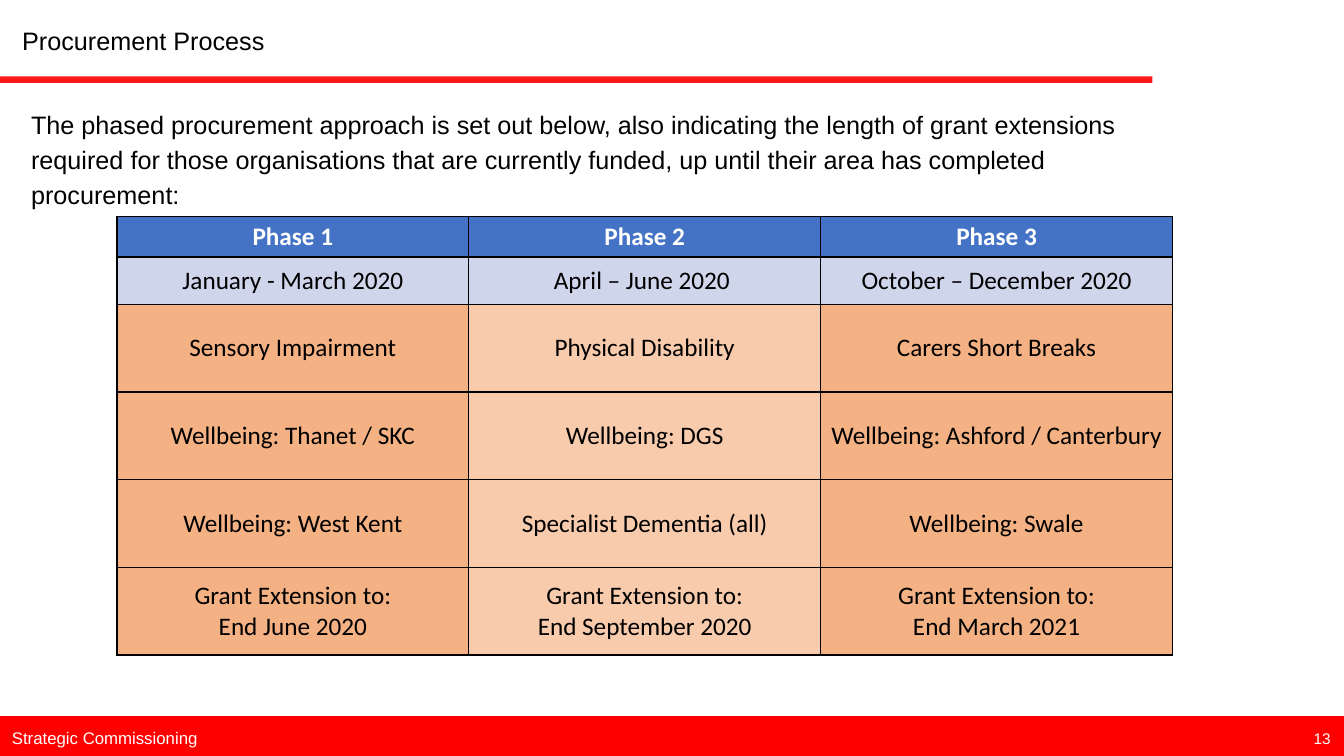
from pptx import Presentation
from pptx import util as u
from pptx.dml.color import RGBColor
from pptx.enum import shapes, text
from pptx.oxml import parse_xml
from pptx.oxml.ns import nsdecls, qn

PX = 9144  # EMU in one px, 100 px to the inch
THEME = {
    "sans": "Arial", "table_font": "Calibri",
    "main": 18, "footer": 12, "number": 11,
    "black": "000000", "white": "FFFFFF", "red": "FF0000",
    "header": "4472C4", "dates": "CFD5EA",
    "columns": ["F4B183", "F8CBAD", "F4B183"],
}
TOP, MIDDLE = text.MSO_ANCHOR.TOP, text.MSO_ANCHOR.MIDDLE


def px(*lengths):
    return [u.Emu(n * PX) for n in lengths]


def style(tf, font, size, color, bold=False, **paragraph_format):
    values = {"name": THEME[font], "size": u.Pt(THEME[size]), "bold": bold}
    for p in tf.paragraphs:
        for name, value in paragraph_format.items():
            setattr(p, name, value)
        for r in p.runs:
            for name, value in values.items():
                setattr(r.font, name, value)
            r.font.color.rgb = RGBColor.from_string(THEME[color])


prs = Presentation()
prs.slide_width, prs.slide_height = px(1333, 750)
s = prs.slides.add_slide(prs.slide_layouts[5])
red = RGBColor.from_string(THEME["red"])

# Red footer band and header rule
band = s.shapes.add_shape(shapes.MSO_SHAPE.RECTANGLE, *px(0, 711, 1333, 40))
band.shadow.inherit = False
band.fill.solid()
band.fill.fore_color.rgb = red
band.line.color.rgb = red
band.line.width = u.Pt(1)

rule = s.shapes.add_connector(shapes.MSO_CONNECTOR.STRAIGHT, *px(0, 79, 1143, 79))
rule.line.color.rgb = red
rule.line.width = u.Pt(4.5)
rule_color = rule.line._ln.find(".//" + qn("a:srgbClr"))
rule_color.append(parse_xml(f'<a:alpha {nsdecls("a")} val="90000"/>'))
rule._element.spPr.append(parse_xml(f'<a:effectLst {nsdecls("a")}/>'))

# Title
title = s.shapes.title
title.left, title.top, title.width, title.height = px(12, 20, 744, 40)
tf = title.text_frame
tf.text = "Procurement Process"
tf.auto_size = text.MSO_AUTO_SIZE.NONE
tf.vertical_anchor = TOP
style(tf, "sans", "main", "black", alignment=text.PP_ALIGN.LEFT)

# Introduction, footer and slide number
INTRO = (
    "The phased procurement approach is set out below, also indicating the length "
    "of grant extensions required for those organisations that are currently funded, "
    "up until their area has completed procurement:"
)
TEXT_BOXES = [
    (INTRO, (21, 99, 1122, 112), TOP, "main", "black",
     {"line_spacing": 1.15, "space_after": u.Pt(10)}),
    ("Strategic Commissioning", (2, 712, 233, 40), MIDDLE, "footer", "white", {}),
    ("13", (1293, 718, 41, 29), TOP, "number", "white", {}),
]
for words, box, anchor, size, color, paragraph_format in TEXT_BOXES:
    tf = s.shapes.add_textbox(*px(*box)).text_frame
    tf.text = words
    tf.word_wrap = True
    tf.vertical_anchor = anchor
    style(tf, "sans", size, color, **paragraph_format)

# Phase table
ROWS = [
    ("Phase 1", "Phase 2", "Phase 3"),
    ("January - March 2020", "April – June 2020 ", "October – December 2020"),
    ("Sensory Impairment", "Physical Disability", "Carers Short Breaks"),
    ("Wellbeing: Thanet / SKC", "Wellbeing: DGS", "Wellbeing: Ashford / Canterbury"),
    ("Wellbeing: West Kent", "Specialist Dementia (all)", "Wellbeing: Swale"),
    tuple(f"Grant Extension to:\nEnd {month}"
          for month in ("June 2020", "September 2020", "March 2021")),
]
HEIGHTS = [40, 47] + [87] * 4
CELL_FORMAT = {
    "vertical_anchor": MIDDLE,
    "margin_left": u.Emu(7 * PX), "margin_right": u.Emu(7 * PX),
    "margin_top": u.Emu(0), "margin_bottom": u.Emu(0),
}
table = s.shapes.add_table(len(ROWS), 3, *px(116, 215, 3 * 349, sum(HEIGHTS))).table
for column in table.columns:
    column.width = u.Emu(349 * PX)
for i, (labels, height) in enumerate(zip(ROWS, HEIGHTS)):
    table.rows[i].height = u.Emu(height * PX)
    for j, label in enumerate(labels):
        cell = table.cell(i, j)
        cell.text = label
        for name, value in CELL_FORMAT.items():
            setattr(cell, name, value)
        style(cell.text_frame, "table_font", "main", "black" if i else "white",
              bold=i == 0, alignment=text.PP_ALIGN.CENTER)
        fill = (THEME["header"], THEME["dates"])[i] if i < 2 else THEME["columns"][j]
        cell.fill.solid()
        cell.fill.fore_color.rgb = RGBColor.from_string(fill)
        tcPr = cell._tc.get_or_add_tcPr()
        for k, side in enumerate(("lnL", "lnR", "lnT", "lnB")):  # borders precede the fill
            tcPr.insert(k, parse_xml(
                f'<a:{side} {nsdecls("a")} w="12700"><a:solidFill>'
                f'<a:srgbClr val="{THEME["black"]}"/></a:solidFill></a:{side}>'))

prs.save("out.pptx")
